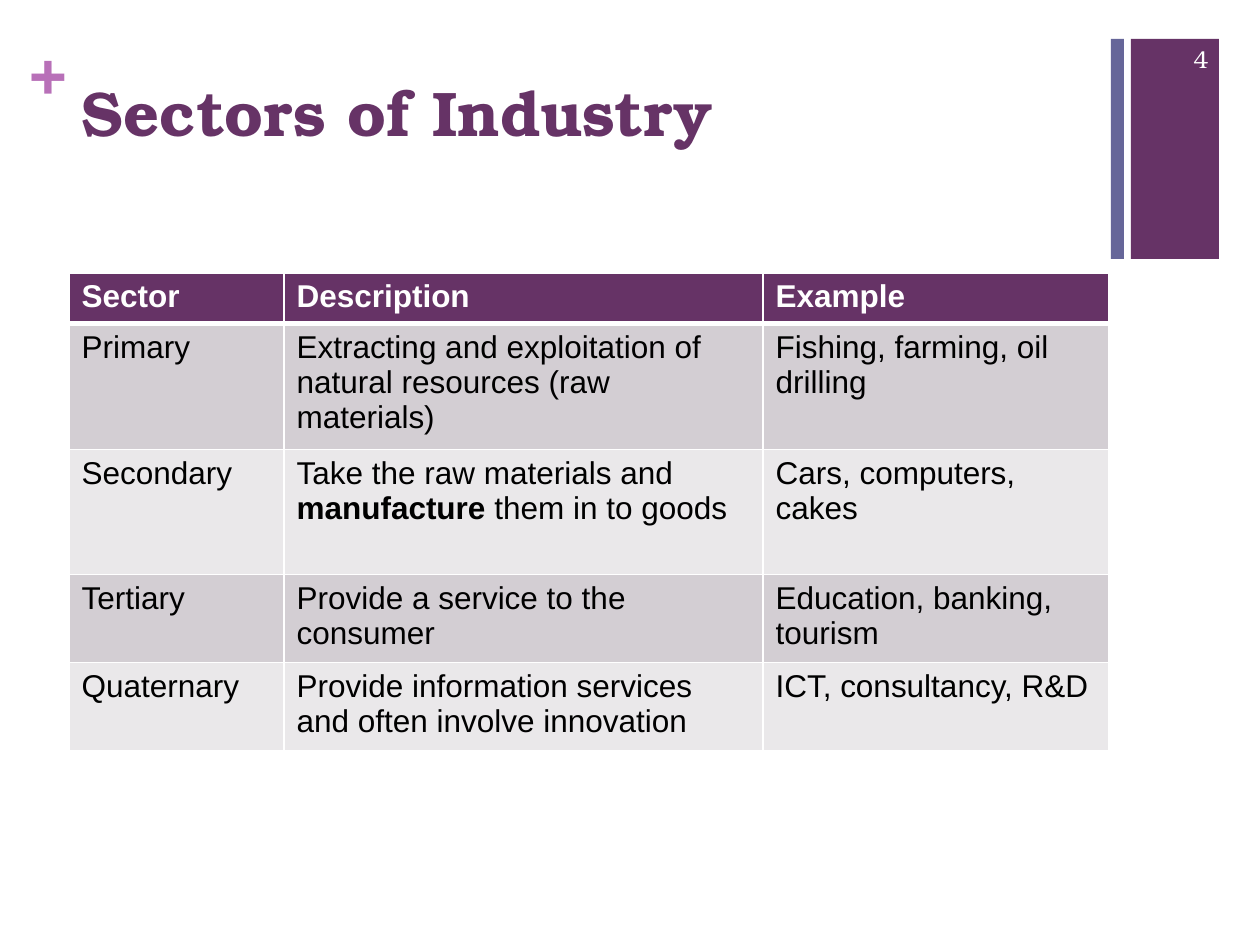
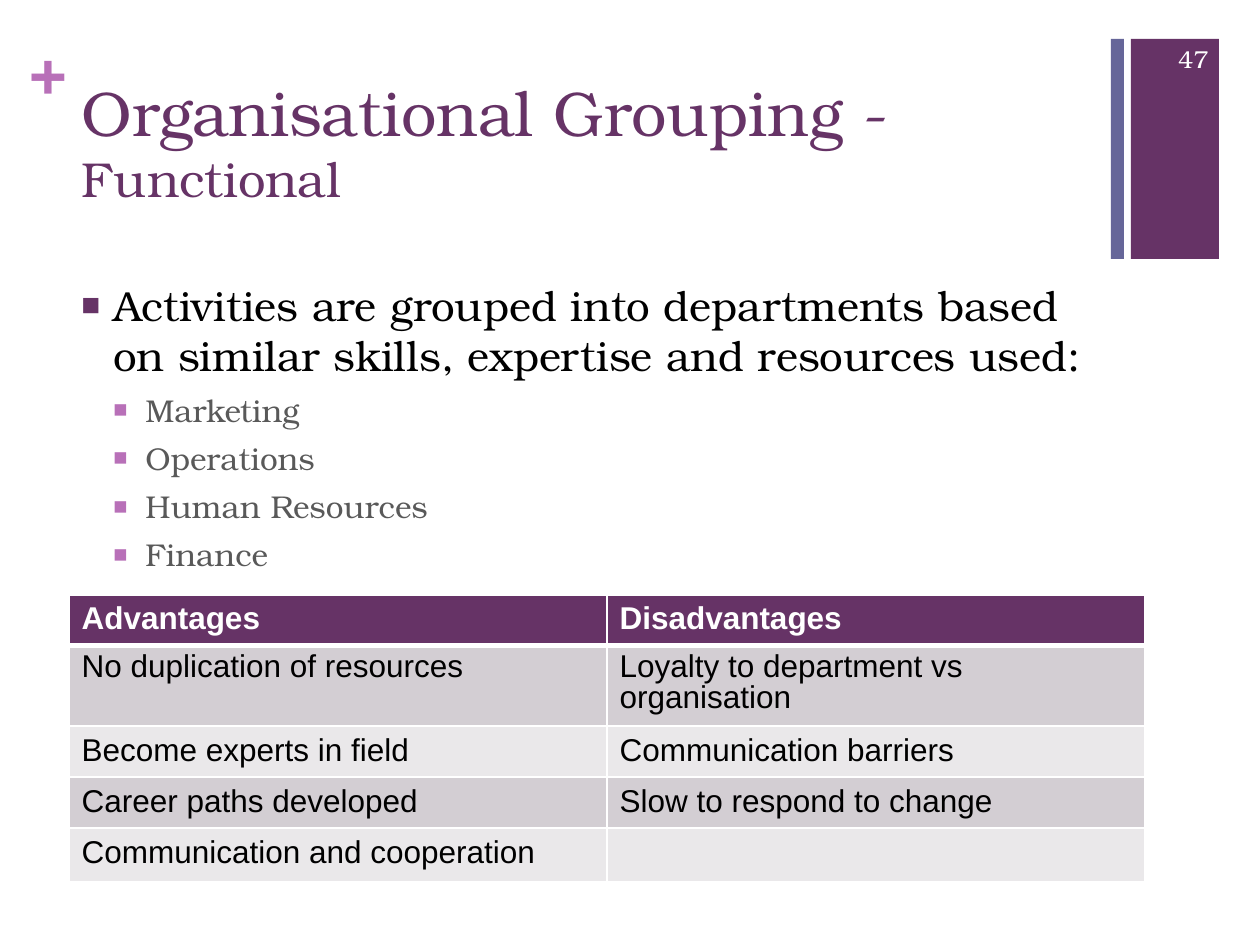
from dataclasses import dataclass

from lxml.etree import SubElement
from pptx import Presentation
from pptx.dml.color import RGBColor
from pptx.enum.shapes import MSO_SHAPE
from pptx.enum.text import MSO_ANCHOR, PP_ALIGN
from pptx.oxml.ns import qn
from pptx.util import Emu, Inches, Pt

EMU_PER_PX = Inches(1) / 126


def px(length):
    return Emu(round(length * EMU_PER_PX))


@dataclass(frozen=True)
class Theme:
    # Colours
    plum: str = "663366"
    orchid: str = "B870B8"
    slate: str = "666699"
    white: str = "FFFFFF"
    black: str = "000000"
    grey: str = "595959"
    row_dark: str = "D3CED3"
    row_light: str = "EAE8EA"
    # Fonts and type sizes
    serif: str = "TeX Gyre Bonum"
    sans: str = "Arial"
    title_size: int = 36
    subtitle_size: int = 28
    lead_size: int = 24
    text_size: int = 18
    number_size: int = 14


class Deck:
    LEFT, CONTENT_TOP, CONTENT_WIDTH = 69, 273, 1041
    INDENT = 32

    def __init__(self, theme):
        self.theme = theme
        self.presentation = Presentation()
        self.presentation.slide_width = px(1260)
        self.presentation.slide_height = px(945)
        self.slide = None

    def add_slide(self, number, title_runs):
        layout = self.presentation.slide_layouts[5]
        self.slide = self.presentation.slides.add_slide(layout)
        t = self.theme
        # Corner bands, plus sign and slide number
        self.band(1131, 88, t.plum)
        self.band(1111, 13, t.slate)
        plus = self.text_box(30, 31, 35, 77, inset=0)
        self.run(plus.paragraphs[0], "+", t.title_size, t.orchid, bold=True)
        corner = self.text_box(1144, 34, 77, 50)
        corner.vertical_anchor = MSO_ANCHOR.MIDDLE
        corner.paragraphs[0].alignment = PP_ALIGN.RIGHT
        self.run(corner.paragraphs[0], number, t.number_size, t.white)
        self.title(title_runs)

    def title(self, runs):
        holder = self.slide.shapes.title
        holder.left, holder.top = px(self.LEFT), px(67)
        holder.width, holder.height = px(self.CONTENT_WIDTH), px(154)
        frame = holder.text_frame
        frame.word_wrap = True
        frame.vertical_anchor = MSO_ANCHOR.TOP
        paragraph = frame.paragraphs[0]
        paragraph.alignment = PP_ALIGN.LEFT
        for index, (text, size, bold) in enumerate(runs):
            if index:
                paragraph.add_line_break()
            self.run(paragraph, text, size, self.theme.plum, bold=bold)

    def band(self, left, width, colour):
        bar = self.slide.shapes.add_shape(
            MSO_SHAPE.RECTANGLE, px(left), px(39), px(width), px(220))
        bar.shadow.inherit = False
        bar.fill.solid()
        bar.fill.fore_color.rgb = RGBColor.from_string(colour)
        bar.line.fill.background()

    def text_box(self, left, top, width, height, inset=None):
        frame = self.slide.shapes.add_textbox(
            px(left), px(top), px(width), px(height)).text_frame
        frame.word_wrap = True
        if inset is not None:
            frame.margin_left = frame.margin_right = px(inset)
            frame.margin_top = frame.margin_bottom = px(inset)
        return frame

    def run(self, paragraph, text, size, colour, bold=False, face=None):
        run = paragraph.add_run()
        run.text = text
        run.font.name = face or self.theme.serif
        run.font.size = Pt(size)
        run.font.bold = bold
        run.font.color.rgb = RGBColor.from_string(colour)

    def bullets(self, items):
        t = self.theme
        styles = [(t.lead_size, t.black, t.plum, 20),
                  (t.text_size, t.grey, t.orchid, 6)]
        frame = self.text_box(self.LEFT, self.CONTENT_TOP,
                              self.CONTENT_WIDTH, 571)
        for index, (level, text) in enumerate(items):
            size, colour, marker, gap = styles[level]
            paragraph = (frame.add_paragraph() if index
                         else frame.paragraphs[0])
            paragraph.level = level
            paragraph.space_before = Pt(gap)
            self.bullet(paragraph, level, marker)
            self.run(paragraph, text, size, colour)

    def bullet(self, paragraph, level, colour):
        props = paragraph._p.get_or_add_pPr()
        props.set("marL", str(px(self.INDENT * (level + 1))))
        props.set("indent", str(-px(self.INDENT)))
        SubElement(SubElement(props, qn("a:buClr")),
                   qn("a:srgbClr"), val=colour)
        SubElement(props, qn("a:buSzPct"), val="75000")
        SubElement(props, qn("a:buFont"), typeface=self.theme.sans)
        SubElement(props, qn("a:buChar"), char="■")

    def table(self, top, widths, heights, rows, tight_rows=()):
        t = self.theme
        grid = self.slide.shapes.add_table(
            len(rows), len(widths), px(self.LEFT), px(top),
            px(sum(widths)), px(sum(heights))).table
        for column, width in zip(grid.columns, widths):
            column.width = px(width)
        for r, (row, height) in enumerate(zip(rows, heights)):
            grid.rows[r].height = px(height)
            header = r == 0
            fill = t.plum if header else (t.row_light, t.row_dark)[r % 2]
            for c, content in enumerate(row):
                cell = grid.cell(r, c)
                # The rule under the header is thicker than the rest
                self.borders(cell, top=3 if r == 1 else 1,
                             bottom=3 if header else 1)
                cell.fill.solid()
                cell.fill.fore_color.rgb = RGBColor.from_string(fill)
                paragraph = cell.text_frame.paragraphs[0]
                if r in tight_rows:
                    paragraph.line_spacing = 0.9
                parts = [content] if isinstance(content, str) else content
                for index, text in enumerate(filter(None, parts)):
                    # Every second part of a split text is emphasised
                    self.run(paragraph, text, t.text_size,
                             t.white if header else t.black,
                             bold=header or index % 2 == 1, face=t.sans)

    def borders(self, cell, top, bottom):
        props = cell._tc.get_or_add_tcPr()
        for side, points in zip("LRTB", (1, 1, top, bottom)):
            line = SubElement(props, qn(f"a:ln{side}"), w=str(Pt(points)))
            SubElement(SubElement(line, qn("a:solidFill")),
                       qn("a:srgbClr"), val=self.theme.white)


def main():
    theme = Theme()
    deck = Deck(theme)

    # Sectors of industry
    deck.add_slide("4", [("Sectors of Industry", theme.title_size, True)])
    sectors = [
        ("Sector", "Description", "Example"),
        ("Primary",
         "Extracting and exploitation of natural resources (raw materials)",
         "Fishing, farming, oil drilling"),
        ("Secondary",
         ("Take the raw materials and ", "manufacture",
          " them in to goods"),
         "Cars, computers, cakes"),
        ("Tertiary", "Provide a service to the consumer",
         "Education, banking, tourism"),
        ("Quaternary",
         "Provide information services and often involve innovation",
         "ICT, consultancy, R&D"),
    ]
    deck.table(deck.CONTENT_TOP, (215, 479, 346), (50, 126, 125, 83, 83),
               sectors)

    # Functional grouping
    deck.add_slide("47", [
        ("Organisational Grouping - ", theme.title_size, False),
        ("Functional", theme.subtitle_size, False)])
    departments = ["Marketing", "Operations", "Human Resources", "Finance"]
    deck.bullets([
        (0, "Activities are grouped into departments based on similar "
            "skills, expertise and resources used:"),
        *((1, department) for department in departments)])
    trade_offs = [
        ("Advantages", "Disadvantages"),
        ("No duplication of resources",
         "Loyalty to department vs organisation"),
        ("Become experts in field", "Communication barriers"),
        ("Career paths developed", "Slow to respond to change"),
        ("Communication and cooperation", ""),
    ]
    deck.table(595, (538, 538), (50, 77, 51, 51, 54), trade_offs,
               tight_rows=(1,))

    deck.presentation.save("out.pptx")


if __name__ == "__main__":
    main()
